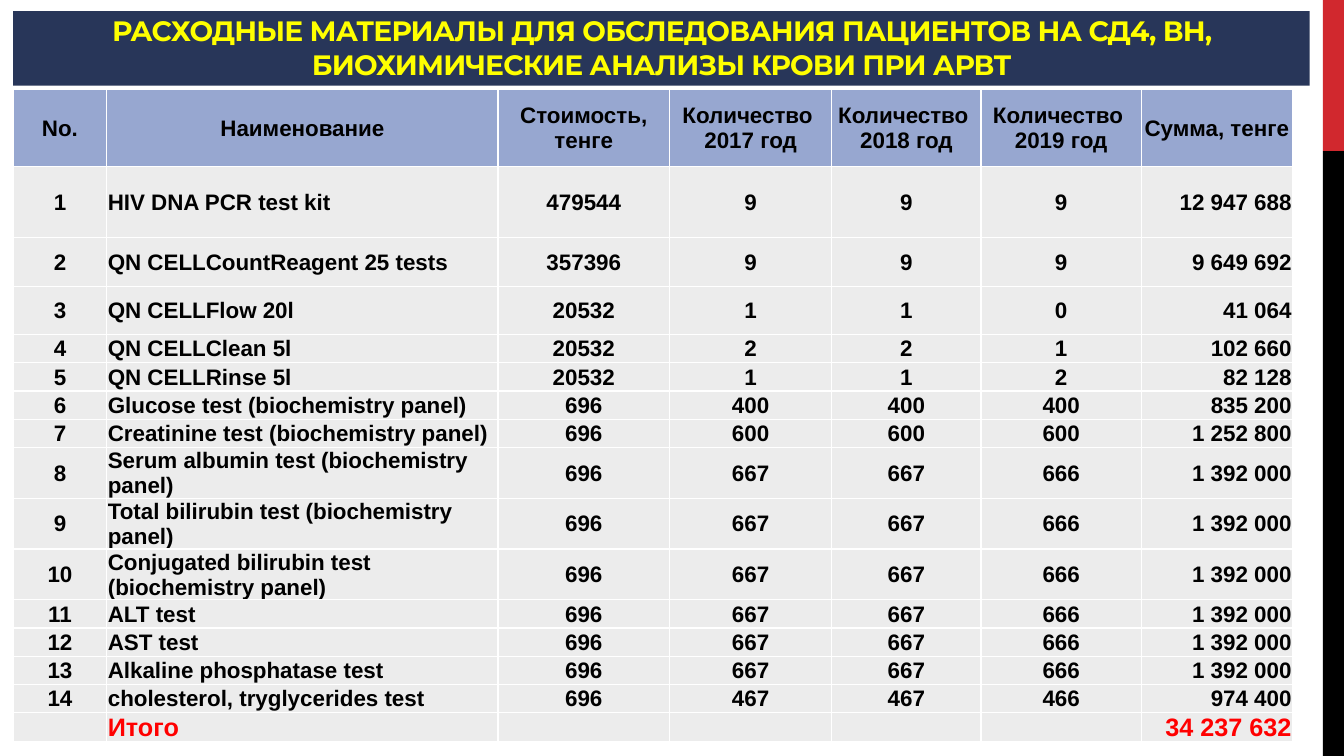
from lxml.etree import SubElement
from pptx import Presentation
from pptx.dml.color import RGBColor
from pptx.enum.shapes import MSO_SHAPE
from pptx.enum.text import MSO_ANCHOR, PP_ALIGN
from pptx.oxml.ns import qn
from pptx.util import Inches, Pt

TITLE = "РАСХОДНЫЕ МАТЕРИАЛЫ ДЛЯ ОБСЛЕДОВАНИЯ ПАЦИЕНТОВ НА СД4, ВН, БИОХИМИЧЕСКИЕ АНАЛИЗЫ КРОВИ ПРИ АРВТ"
YEARS = (2017, 2018, 2019)
HEADER = ["No.", "Наименование", "Стоимость, тенге",
          *(f"Количество \n{year} год" for year in YEARS), "Сумма, тенге"]
SUPPLIES = [
    ("HIV DNA PCR test kit", 479544, (9, 9, 9)),
    ("QN CELLCountReagent 25 tests", 357396, (9, 9, 9)),
    ("QN CELLFlow 20l", 20532, (1, 1, 0)),
    ("QN CELLClean 5l", 20532, (2, 2, 1)),
    ("QN CELLRinse 5l", 20532, (1, 1, 2)),
    ("Glucose test (biochemistry panel)", 696, (400, 400, 400)),
    ("Creatinine test (biochemistry panel)", 696, (600, 600, 600)),
    ("Serum albumin test (biochemistry panel)", 696, (667, 667, 666)),
    ("Total bilirubin test (biochemistry panel)", 696, (667, 667, 666)),
    ("Conjugated bilirubin test (biochemistry panel)", 696, (667, 667, 666)),
    ("ALT test", 696, (667, 667, 666)),
    ("AST test", 696, (667, 667, 666)),
    ("Alkaline phosphatase test", 696, (667, 667, 666)),
    ("cholesterol, tryglycerides test", 696, (467, 467, 466)),
]
COLORS = {"red_bar": "D1282E", "black_bar": "000000", "title_fill": "283659",
          "title_text": "FFFF00", "header": "97A7D0", "body": "ECECEC",
          "text": "000000", "total": "FF0000", "border": "FFFFFF"}
SLIDE_W, SLIDE_H = 13.33, 7.5
MARGIN = 0.13
BAR_W = 0.21
TABLE_TOP = 0.89
COL_WIDTHS = [0.93, 3.88, 1.7, 1.61, 1.48, 1.59, 1.5]
ROW_HEIGHTS = [0.76, 0.71, *[0.48] * 2, *[0.28] * 4, *[0.48] * 3, *[0.28] * 5]
ALIGNS = [PP_ALIGN.CENTER, PP_ALIGN.LEFT, *[PP_ALIGN.CENTER] * 4, PP_ALIGN.RIGHT]


def color(name):
    return RGBColor.from_string(COLORS[name])


def spaced(number):
    return f"{number:,}".replace(",", " ")


def add_block(slide, fill, x, y, w, h):
    sp = slide.shapes.add_shape(MSO_SHAPE.RECTANGLE, Inches(x), Inches(y), Inches(w), Inches(h))
    sp.shadow.inherit = False
    sp.fill.solid()
    sp.fill.fore_color.rgb = color(fill)
    sp.line.fill.background()
    return sp


def style_paragraph(p, align, font, size, ink):
    p.alignment = align
    p.font.name = font
    p.font.size = Pt(size)
    p.font.bold = True
    p.font.color.rgb = color(ink)


def add_title(slide):
    sp = add_block(slide, "title_fill", MARGIN, 0.11, 12.86, 0.74)
    tf = sp.text_frame
    tf.word_wrap = True
    tf.vertical_anchor = MSO_ANCHOR.BOTTOM
    p = tf.paragraphs[0]
    style_paragraph(p, PP_ALIGN.CENTER, "Montserrat", 20, "title_text")
    r = p.add_run()
    r.text = TITLE
    r.font.color.rgb = color("title_text")
    r._r.get_or_add_rPr().set("spc", "-60")


def add_borders(cell):
    tcPr = cell._tc.get_or_add_tcPr()
    for side in ("lnL", "lnR", "lnT", "lnB"):
        ln = SubElement(tcPr, qn(f"a:{side}"), w=str(Pt(1)))
        fill = SubElement(ln, qn("a:solidFill"))
        SubElement(fill, qn("a:srgbClr"), val=COLORS["border"])


def fill_cell(cell, text, align, fill, size, ink):
    add_borders(cell)
    cell.fill.solid()
    cell.fill.fore_color.rgb = color(fill)
    cell.margin_left = cell.margin_right = cell.margin_top = Inches(0.01)
    cell.margin_bottom = 0
    cell.vertical_anchor = MSO_ANCHOR.MIDDLE
    cell.text = text
    for p in cell.text_frame.paragraphs:
        style_paragraph(p, align, "Arial", size, ink)


def table_rows():
    total = 0
    yield HEADER, "header", 16, "text"
    for number, (name, price, counts) in enumerate(SUPPLIES, 1):
        amount = price * sum(counts)
        total += amount
        row = [str(number), name, str(price), *map(str, counts), spaced(amount)]
        yield row, "body", 16, "text"
    yield ["", "Итого", *[""] * 4, spaced(total)], "body", 18, "total"


def add_supplies_table(slide):
    frame = slide.shapes.add_table(len(ROW_HEIGHTS), len(COL_WIDTHS), Inches(MARGIN), Inches(TABLE_TOP),
                                   Inches(sum(COL_WIDTHS)), Inches(sum(ROW_HEIGHTS)))
    table = frame.table
    table.first_row = table.horz_banding = False
    for column, width in zip(table.columns, COL_WIDTHS):
        column.width = Inches(width)
    for row, height, (texts, fill, size, ink) in zip(table.rows, ROW_HEIGHTS, table_rows()):
        row.height = Inches(height)
        for cell, text, align in zip(row.cells, texts, ALIGNS):
            header_align = PP_ALIGN.CENTER if fill == "header" else align
            fill_cell(cell, text, header_align, fill, size, ink)


def main():
    prs = Presentation()
    prs.slide_width, prs.slide_height = Inches(SLIDE_W), Inches(SLIDE_H)
    slide = prs.slides.add_slide(prs.slide_layouts[6])
    bar_x, split = SLIDE_W - BAR_W, SLIDE_H / 5
    add_block(slide, "red_bar", bar_x, 0, BAR_W, split)
    add_block(slide, "black_bar", bar_x, split, BAR_W, SLIDE_H - split)
    add_title(slide)
    add_supplies_table(slide)
    prs.save("out.pptx")


if __name__ == "__main__":
    main()
